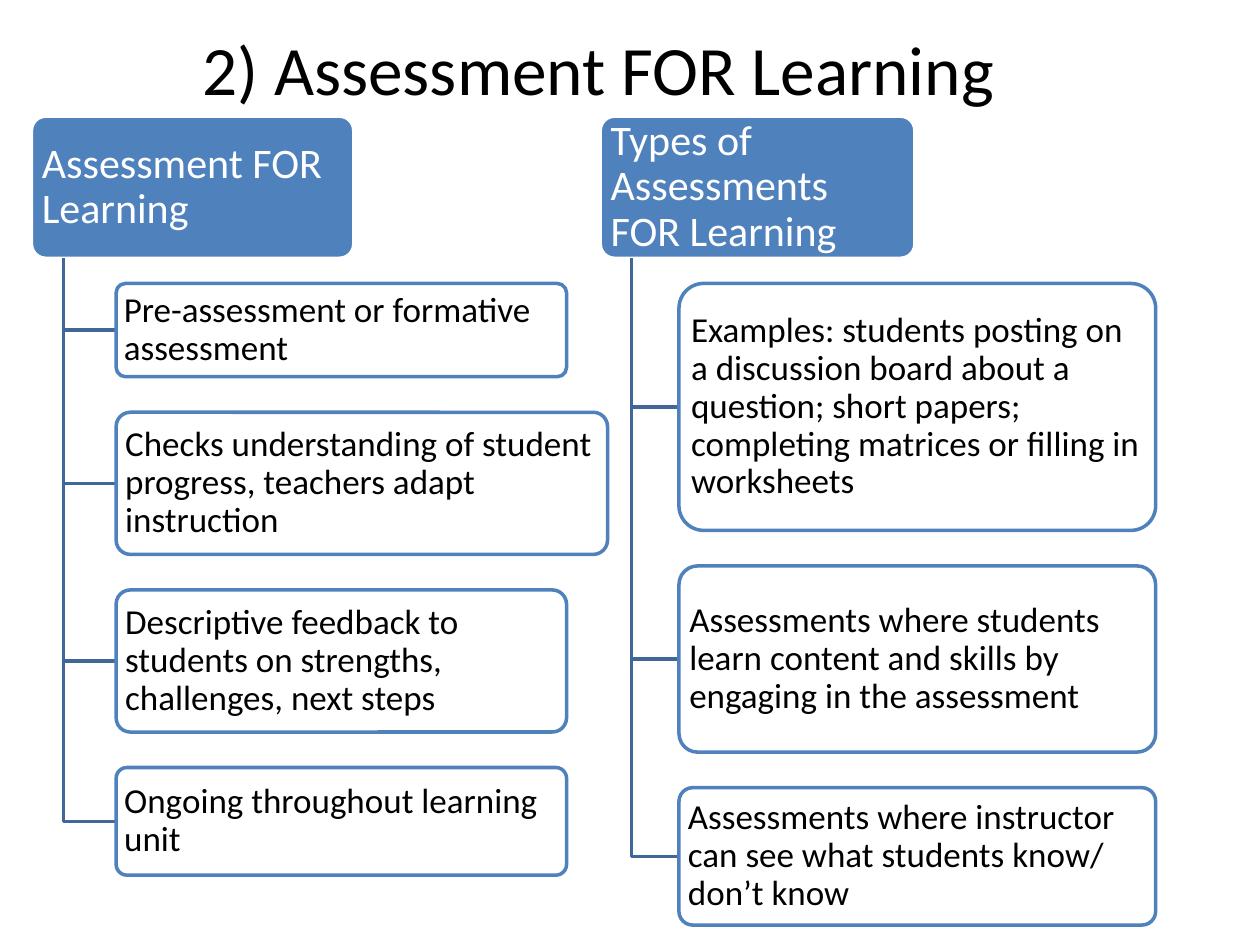
"""Build the Assessment FOR Learning slide: two headed columns of linked cards."""
import pptx
import pptx.dml.color
import pptx.enum.shapes
import pptx.enum.text
import pptx.oxml
import pptx.oxml.ns
import pptx.util

Pt = pptx.util.Pt
RGB = pptx.dml.color.RGBColor
ALIGN = pptx.enum.text.PP_ALIGN
BLUE = RGB(0x4F, 0x81, 0xBD)
NAVY = RGB(0x3F, 0x67, 0x97)
WHITE = RGB(255, 255, 255)
BLACK = RGB(0, 0, 0)
FONT = "Calibri"

TITLE = "2) Assessment FOR Learning"
COLUMNS = [
    {"head": "Assessment FOR Learning", "left": 18, "width": 184.2, "inner": 66.4,
     "cards": [
         ("Pre-assessment or formative assessment", 257.4, 53.3),
         ("Checks understanding of student progress, teachers adapt instruction", 280.8, 81.2),
         ("Descriptive feedback to students on strengths, challenges, next steps", 257.4, 81.2),
         ("Ongoing throughout learning unit", 257.4, 61.5)]},
    {"head": "Types of Assessments FOR Learning", "left": 343, "width": 179.8, "inner": 388,
     "cards": [
         ("Examples: students posting on a discussion board about a question; "
          "short papers; completing matrices or filling in worksheets", 272.4, 141.1),
         ("Assessments where students learn content and skills by engaging in the assessment",
          272.4, 106.4),
         ("Assessments where instructor can see what students know/ don’t know", 272.4, 78.5)]},
]
HEAD_TOP, HEAD_TALL = 66.4, 81.2
CARD_TOP, GAP = 162, 20.3
STEM = 0.1


def write(shape, text, size, color, align, inset, space):
    frame = shape.text_frame
    frame.word_wrap = True
    frame.vertical_anchor = pptx.enum.text.MSO_ANCHOR.MIDDLE
    frame.margin_left = frame.margin_right = Pt(inset[0])
    frame.margin_top = frame.margin_bottom = Pt(inset[1])
    para = frame.paragraphs[0]
    para.alignment = align
    para.line_spacing = space
    run = para.add_run()
    run.text = text
    run.font.name = FONT
    run.font.size = Pt(size)
    run.font.color.rgb = color


def add_box(slide, box, text, size, fill, line, ink, side):
    shape = slide.shapes.add_shape(
        pptx.enum.shapes.MSO_SHAPE.ROUNDED_RECTANGLE, *map(Pt, box))
    shape.adjustments[0] = 0.1
    shape.shadow.inherit = False
    shape.fill.solid()
    shape.fill.fore_color.rgb = fill
    shape.line.color.rgb = line
    shape.line.width = Pt(2)
    write(shape, text, size, ink, ALIGN.LEFT, (side, 2), 0.9)
    return shape


def add_card(slide, box, text):
    card = add_box(slide, box, text, 20, WHITE, BLUE, BLACK, 2.8)
    tint = card.fill._xPr.find(".//" + pptx.oxml.ns.qn("a:srgbClr"))
    tint.append(pptx.oxml.parse_xml(
        f'<a:alpha {pptx.oxml.ns.nsdecls("a")} val="90000"/>'))


def add_link(slide, stem, top, end, mid):
    pen = slide.shapes.build_freeform(Pt(stem), Pt(top))
    pen.add_line_segments([(Pt(stem), Pt(mid)), (Pt(end), Pt(mid))], close=False)
    link = pen.convert_to_shape()
    link.shadow.inherit = False
    link.fill.background()
    link.line.color.rgb = NAVY
    link.line.width = Pt(2)


def add_column(slide, col):
    left, width, inner = col["left"], col["width"], col["inner"]
    add_box(slide, (left, HEAD_TOP, width, HEAD_TALL), col["head"],
            24, BLUE, WHITE, WHITE, 3.6)
    top = CARD_TOP
    for text, wide, tall in col["cards"]:
        add_link(slide, left + STEM * width, HEAD_TOP + HEAD_TALL, inner, top + tall / 2)
        add_card(slide, (inner, top, wide, tall), text)
        top += tall + GAP


def main():
    deck = pptx.Presentation()
    deck.slide_width, deck.slide_height = Pt(720), Pt(540)
    slide = deck.slides.add_slide(deck.slide_layouts[6])
    title = slide.shapes.add_textbox(Pt(0), Pt(18), Pt(684), Pt(42))
    write(title, TITLE, 39.6, BLACK, ALIGN.CENTER, (7.2, 3.6), 1.0)
    for col in COLUMNS:
        add_column(slide, col)
    deck.save("out.pptx")


if __name__ == "__main__":
    main()
